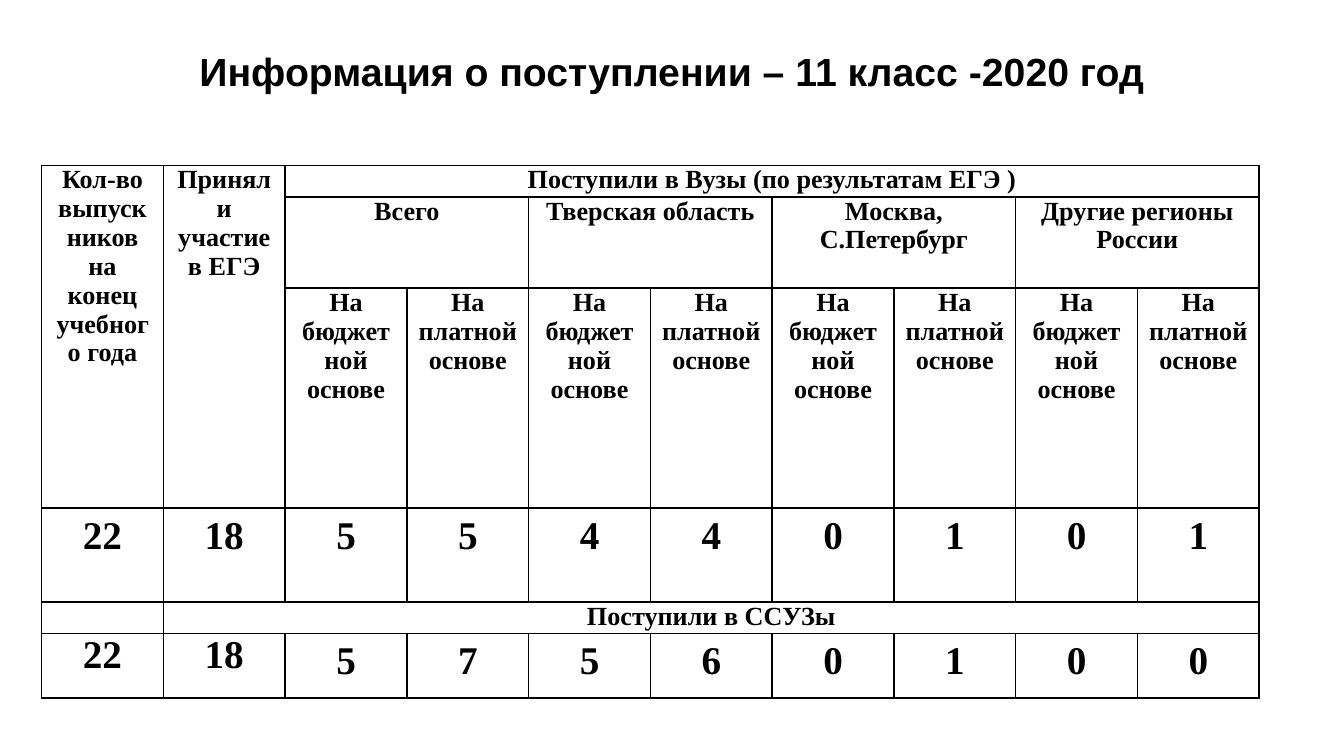
from lxml import etree
from pptx import Presentation
from pptx import util as u
from pptx.dml import color
from pptx.enum import text
from pptx.oxml import ns

BLACK = "000000"
WIDTH = 9.06
ROW_HEIGHTS = [0.23, 0.68, 1.23, 0.7, 0.23, 0.48]
REGIONS = ["Всего", "Тверская область", "Москва, С.Петербург", "Другие регионы России"]
BASES = ["На бюджетной основе", "На платной основе"]
UNIVERSITY = [22, 18, 5, 5, 4, 4, 0, 1, 0, 1]
COLLEGE = [22, 18, 5, 7, 5, 6, 0, 1, 0, 0]


def rgb(value):
    return color.RGBColor.from_string(value)


def write(frame, content, size=14, font="Times New Roman", ink=BLACK, spacing=None):
    para = frame.paragraphs[0]
    para.alignment = text.PP_ALIGN.CENTER
    if spacing:
        para.line_spacing = spacing
    if not content:
        etree.SubElement(para._p, ns.qn("a:endParaRPr"), sz=str(size * 100))
        return
    span = para.add_run()
    span.text = content
    span.font.size = u.Pt(size)
    span.font.name = font
    span.font.bold = True
    span.font.color.rgb = rgb(ink)


class AdmissionSlide:
    """Holds the slide and draws its title and table in one style."""

    def __init__(self, deck):
        self.slide = deck.slides.add_slide(deck.slide_layouts[6])

    def title(self, content, left, top, width, height):
        box = self.slide.shapes.add_textbox(*map(u.Inches, (left, top, width, height)))
        frame = box.text_frame
        frame.word_wrap = True
        frame.vertical_anchor = text.MSO_ANCHOR.MIDDLE
        write(frame, content, size=21, font="Arial")

    def table(self, left, top, width, heights, columns):
        frame = self.slide.shapes.add_table(
            len(heights), columns, *map(u.Inches, (left, top, width, sum(heights))))
        self.grid = frame.table
        self.grid.first_row = self.grid.horz_banding = False
        for column in self.grid.columns:
            column.width = u.Inches(width / columns)
        for row, height in zip(self.grid.rows, heights):
            row.height = u.Inches(height)
        for cell in self.grid.iter_cells():
            cell.margin_top = cell.margin_bottom = 0
            self.border(cell)
            cell.fill.background()

    def border(self, cell, ink=BLACK, weight=1):
        properties = cell._tc.get_or_add_tcPr()
        for side in ("lnL", "lnR", "lnT", "lnB"):
            line = etree.SubElement(properties, ns.qn(f"a:{side}"), w=str(u.Pt(weight)))
            fill = etree.SubElement(line, ns.qn("a:solidFill"))
            etree.SubElement(fill, ns.qn("a:srgbClr"), val=ink)

    def cell(self, row, column, content, rows=1, columns=1, inset=0.07, **style):
        cell = self.grid.cell(row, column)
        if rows * columns > 1:
            cell.merge(self.grid.cell(row + rows - 1, column + columns - 1))
        cell.margin_left = cell.margin_right = u.Inches(inset)
        write(cell.text_frame, content, **style)

    def numbers(self, row, values, plain=0):
        for column, value in enumerate(values):
            style = {} if column < plain else {"inset": 0.06, "spacing": 1.15}
            self.cell(row, column, str(value), size=21, **style)


def main():
    deck = Presentation()
    deck.slide_width = u.Inches(10)
    deck.slide_height = deck.slide_width * 9 // 16
    page = AdmissionSlide(deck)
    page.title("Информация о поступлении – 11 класс -2020 год", 0.5, 0.23, 9, 0.6)
    page.table(0.31, 1.23, WIDTH, ROW_HEIGHTS, len(UNIVERSITY))
    page.cell(0, 0, "Кол-во выпускников на конец учебного года", rows=3)
    page.cell(0, 1, "Приняли участие в ЕГЭ", rows=3)
    page.cell(0, 2, "Поступили в Вузы (по результатам ЕГЭ )", columns=8)
    for index, region in enumerate(REGIONS):
        first = 2 + index * len(BASES)
        page.cell(1, first, region, columns=len(BASES))
        for offset, basis in enumerate(BASES):
            page.cell(2, first + offset, basis)
    page.numbers(3, UNIVERSITY)
    page.cell(4, 0, "")
    page.cell(4, 1, "Поступили в ССУЗы", columns=9)
    page.numbers(5, COLLEGE, plain=2)
    deck.save("out.pptx")


if __name__ == "__main__":
    main()
